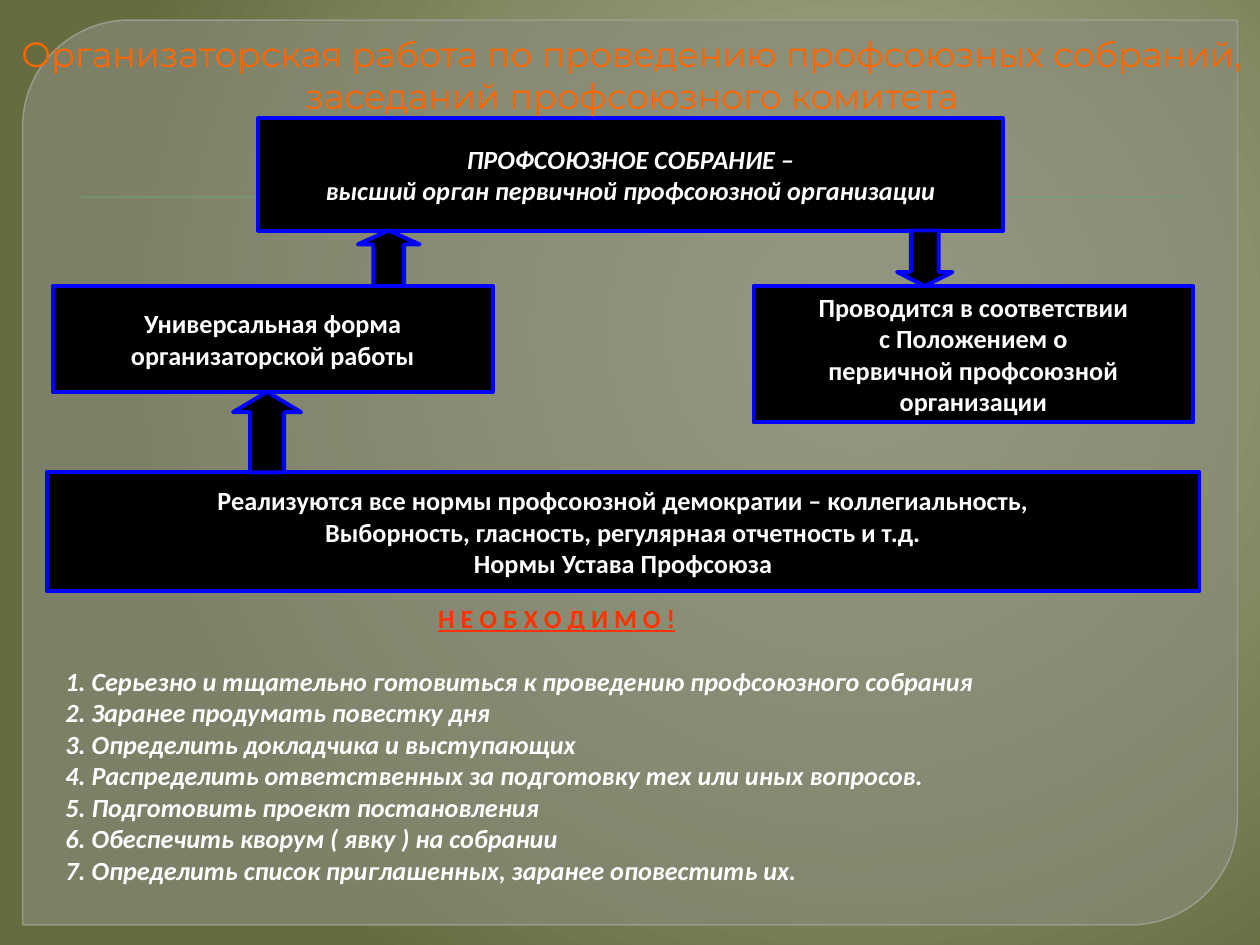
from pptx import Presentation
from pptx.dml.color import RGBColor
from pptx.enum.shapes import MSO_SHAPE as Shape
from pptx.enum.text import MSO_ANCHOR as Anchor, PP_ALIGN as Align
from pptx.oxml import parse_xml
from pptx.oxml.ns import nsdecls, qn
from pptx.util import Inches, Pt

BLACK, BLUE, WHITE = "000000", "0000FF", "FFFFFF"


def rgb(color):
    return RGBColor.from_string(color)


def set_alpha(fill_element, percent):
    clr = fill_element.find(".//" + qn("a:srgbClr"))
    clr.append(parse_xml(f'<a:alpha {nsdecls("a")} val="{percent * 1000}"/>'))


def add_background(s):
    stops = "".join(
        f'<a:gs pos="{pos * 1000}"><a:srgbClr val="{color}"/></a:gs>'
        for pos, color in [(0, "A9AE8D"), (20, "9FA583"), (100, "666C40")])
    s.element.cSld.insert(0, parse_xml(
        f'<p:bg {nsdecls("p", "a")}><p:bgPr><a:gradFill rotWithShape="1">'
        f'<a:gsLst>{stops}</a:gsLst><a:path path="circle">'
        '<a:fillToRect l="68000" t="35000" r="32000" b="65000"/></a:path>'
        '</a:gradFill><a:effectLst/></p:bgPr></p:bg>'))


def add_shape(s, kind, box, fill, line=None, width=2.25, adj=()):
    sp = s.shapes.add_shape(kind, *map(Inches, box))
    sp.shadow.inherit = False
    sp.fill.solid()
    sp.fill.fore_color.rgb = rgb(fill)
    if line:
        sp.line.color.rgb = rgb(line)
        sp.line.width = Pt(width)
    else:
        sp.line.fill.background()
    for i, value in enumerate(adj):
        sp.adjustments[i] = value
    return sp


def write(tf, lines, color=WHITE, size=15, font="Calibri", align=Align.LEFT,
          bold=True, italic=False, underline=False):
    for i, line in enumerate(lines):
        p = tf.paragraphs[0] if i == 0 else tf.add_paragraph()
        p.alignment = align
        r = p.add_run()
        r.text = line
        f = r.font
        f.name, f.size, f.color.rgb = font, Pt(size), rgb(color)
        f.bold, f.italic, f.underline = bold, italic, underline


def add_text(s, box, lines, **style):
    tf = s.shapes.add_textbox(*map(Inches, box)).text_frame
    tf.word_wrap = True
    write(tf, lines, **style)
    return tf


def add_panel(s, box):
    """Translucent panel with a thin rule across it."""
    x, y, w, h = box
    panel = add_shape(s, Shape.ROUND_2_DIAG_RECTANGLE, box, "888B7B",
                      "9DA090", 0.87, (0.118, 0))
    props = panel.element.spPr
    set_alpha(props.find(qn("a:solidFill")), 65)
    set_alpha(props.find(qn("a:ln")), 88)
    rule = add_shape(s, Shape.RECTANGLE, (x + 0.46, y + 1.4, w - 0.89, 0.01), "72A376")
    rule.element.spPr.find(qn("a:effectLst")).append(parse_xml(
        f'<a:outerShdw {nsdecls("a")} blurRad="12700" dist="12700" dir="5400000">'
        '<a:srgbClr val="000000"><a:alpha val="75000"/></a:srgbClr></a:outerShdw>'))


def add_title(s, box):
    tf = add_text(s, box, ["Организаторская работа по проведению профсоюзных собраний,",
                           "заседаний профсоюзного комитета"],
                  color="FF6600", size=20, font="Montserrat",
                  align=Align.CENTER, bold=False)
    # The first line needs nearly the full slide width
    tf.margin_left = tf.margin_right = 0
    # Letter outline
    for p in tf.paragraphs:
        for r in p.runs:
            r.font._element.insert(0, parse_xml(
                f'<a:ln {nsdecls("a")} w="19050"><a:solidFill>'
                '<a:srgbClr val="FFFF00"/></a:solidFill></a:ln>'))


def add_scheme(s, x, y):
    """Boxes and block arrows, placed from the top left corner of the scheme."""
    boxes = [
        ((1.68, 0, 5.91, 0.89), True,
         ["ПРОФСОЮЗНОЕ СОБРАНИЕ –", "высший орган первичной профсоюзной организации"]),
        ((0.05, 1.33, 3.49, 0.84), False,
         ["Универсальная форма", "организаторской работы"]),
        ((5.61, 1.33, 3.49, 1.08), False,
         ["Проводится в соответствии", "с Положением о",
          "первичной профсоюзной", "организации"]),
        ((0, 2.81, 9.15, 0.94), False,
         ["Реализуются все нормы профсоюзной демократии – коллегиальность,",
          "Выборность, гласность, регулярная отчетность и т.д.",
          "Нормы Устава Профсоюза"]),
    ]
    for (dx, dy, w, h), italic, lines in boxes:
        sp = add_shape(s, Shape.RECTANGLE, (x + dx, y + dy, w, h), BLACK, BLUE)
        tf = sp.text_frame
        tf.word_wrap = True
        tf.vertical_anchor = Anchor.MIDDLE
        write(tf, lines, align=Align.CENTER, italic=italic)

    arrows = [
        (Shape.UP_ARROW, (1.48, 2.17, 0.54, 0.64), 0.3),
        (Shape.UP_ARROW, (2.47, 0.89, 0.49, 0.44), 0.25),
        (Shape.DOWN_ARROW, (6.75, 0.89, 0.44, 0.44), 0.25),
    ]
    for kind, (dx, dy, w, h), head in arrows:
        add_shape(s, kind, (x + dx, y + dy, w, h), BLACK, BLUE, adj=(0.5, head))


def add_checklist(s, x, y):
    add_text(s, (x + 2.96, y, 2.43, 0.35), ["Н Е О Б Х О Д И М О !"],
             color="FF3300", underline=True)
    steps = [
        "Серьезно и тщательно готовиться к проведению профсоюзного собрания",
        "Заранее продумать повестку дня",
        "Определить докладчика и выступающих",
        "Распределить ответственных за подготовку тех или иных вопросов.",
        "Подготовить проект постановления",
        "Обеспечить кворум ( явку ) на собрании",
        "Определить список приглашенных, заранее оповестить их.",
    ]
    add_text(s, (x, y + 0.5, 8.58, 1.85),
             [f"{n}. {step}" for n, step in enumerate(steps, 1)], italic=True)


def main():
    prs = Presentation()
    prs.slide_width, prs.slide_height = Inches(10), Inches(7.5)
    s = prs.slides.add_slide(prs.slide_layouts[6])
    add_background(s)
    add_panel(s, (0.18, 0.16, 9.64, 7.18))
    add_title(s, (0.05, 0.21, 9.93, 0.73))
    add_scheme(s, 0.37, 0.94)
    add_checklist(s, 0.42, 4.73)
    prs.save("out.pptx")


if __name__ == "__main__":
    main()
